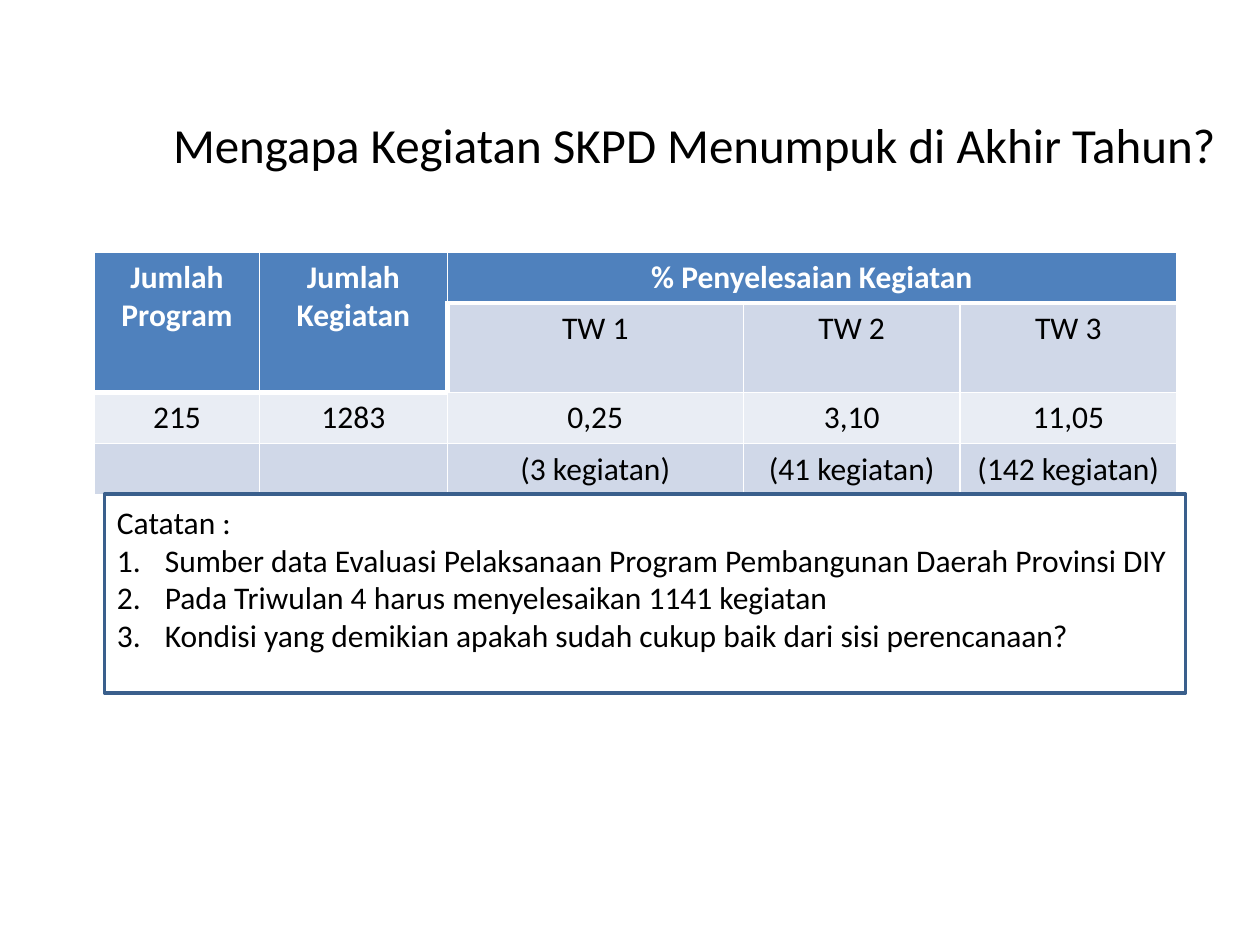
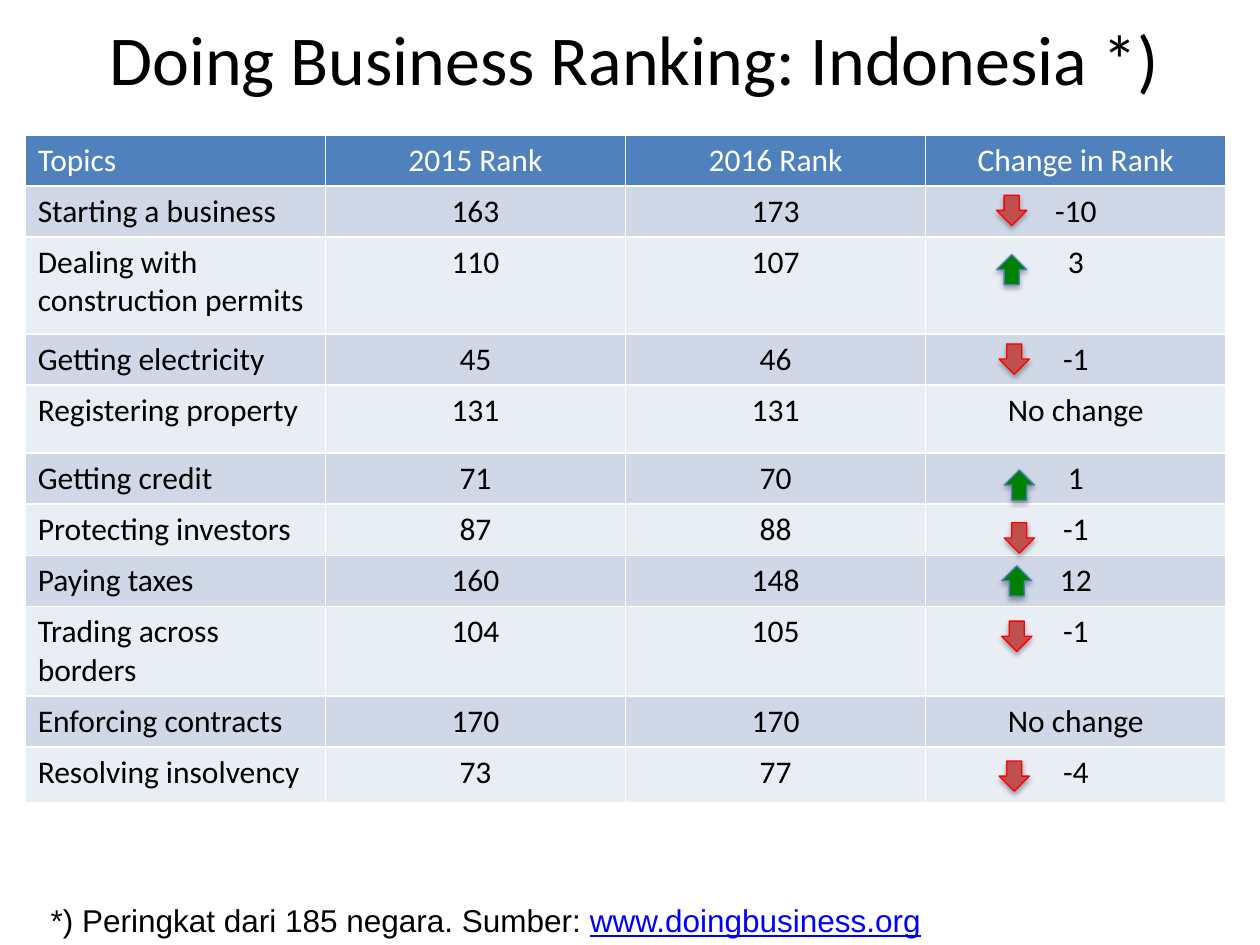
"""Builds two slides on activity completion and business rankings."""
from lxml import etree
from pptx import Presentation
from pptx.dml.color import RGBColor
from pptx.enum.shapes import MSO_SHAPE
from pptx.enum.text import MSO_ANCHOR, PP_ALIGN
from pptx.oxml.ns import qn
from pptx.util import Inches, Pt

CENTER, LEFT = PP_ALIGN.CENTER, PP_ALIGN.LEFT
TOP, MIDDLE = MSO_ANCHOR.TOP, MSO_ANCHOR.MIDDLE
RECT, UP, DOWN = MSO_SHAPE.RECTANGLE, MSO_SHAPE.UP_ARROW, MSO_SHAPE.DOWN_ARROW
TITLE_ONLY = 5

COLORS = {
    "text": "000000", "white": "FFFFFF", "head": "4F81BD", "odd": "D0D8E8",
    "even": "E9EDF4", "note": "3A5F8C", "link": "0000FF",
    "up": "008000", "up_line": "4B7EBC", "down": "C0504D", "down_line": "FF0000",
}
BODY_FONT, NOTE_FONT, BODY_SIZE = "Calibri", "Arial", 18
ARROW = 0.24

PROGRESS_TITLE = "Mengapa Kegiatan SKPD Menumpuk di Akhir Tahun?"
PROGRESS = [
    ("Jumlah Program", "Jumlah Kegiatan", "% Penyelesaian Kegiatan", "", ""),
    ("", "", "TW 1", "TW 2", "TW 3"),
    ("215", "1283", "0,25", "3,10", "11,05"),
    ("", "", "(3 kegiatan)", "(41 kegiatan)", "(142 kegiatan)"),
]
PROGRESS_COLS = [1.31, 1.49, 2.35, 1.72, 1.72]
PROGRESS_ROWS = [0.4, 0.71, 0.4, 0.4]
PROGRESS_SPANS = [((0, 0), (1, 0)), ((0, 1), (1, 1)), ((0, 2), (0, 4))]
NOTES_HEAD = "Catatan :"
NOTES = [
    "Sumber data Evaluasi Pelaksanaan Program Pembangunan Daerah Provinsi DIY",
    "Pada Triwulan 4 harus menyelesaikan 1141 kegiatan",
    "Kondisi yang demikian apakah sudah cukup baik dari sisi perencanaan?",
]

RANKING_TITLE = "Doing Business Ranking: Indonesia *)"
RANKING_HEAD = ("Topics", "2015 Rank", "2016 Rank", "Change in Rank")
RANKING = [
    ("Starting a business", "163", "173", "-10"),
    ("Dealing with construction permits", "110", "107", "3"),
    ("Getting electricity", "45", "46", "-1"),
    ("Registering property", "131", "131", "No change"),
    ("Getting credit", "71", "70", "1"),
    ("Protecting investors", "87", "88", "-1"),
    ("Paying taxes", "160", "148", "12"),
    ("Trading across borders", "104", "105", "-1"),
    ("Enforcing contracts", "170", "170", "No change"),
    ("Resolving insolvency", "73", "77", "-4"),
]
RANKING_ROWS = [0.4, 0.4, 0.77, 0.4, 0.54, 0.4, 0.4, 0.4, 0.71, 0.4, 0.44]
RANKING_LEFT, RANKING_TOP, RANKING_WIDTH = 0.2, 1.07, 9.53
ARROW_OFFSETS = {1: (7.91, 0.08), 2: (7.91, 0.15), 3: (7.93, 0.09), 5: (7.97, 0.15),
                 6: (7.97, 0.17), 7: (7.95, 0.11), 8: (7.95, 0.15), 10: (7.93, 0.15)}
SOURCE = [("*) Peringkat dari 185 negara. Sumber: ", "text", False),
          ("www.doingbusiness.org", "link", True)]


def rgb(name):
    return RGBColor.from_string(COLORS[name])


def box(*lengths):
    return [Inches(v) for v in lengths]


def style(p, color="text", size=BODY_SIZE, font=BODY_FONT, bold=False):
    for r in p.runs:
        r.font.name, r.font.size, r.font.bold = font, Pt(size), bold
        r.font.color.rgb = rgb(color)


def add_slide(prs, title, size, at):
    s = prs.slides.add_slide(prs.slide_layouts[TITLE_ONLY])
    sp = s.shapes.title
    sp.left, sp.top, sp.width, sp.height = box(*at)
    tf = sp.text_frame
    tf.text = title
    tf.vertical_anchor = MIDDLE
    tf.paragraphs[0].alignment = CENTER
    style(tf.paragraphs[0], size=size)
    return s


def set_borders(cell, widths):
    tc_pr = cell._tc.get_or_add_tcPr()
    for i, (side, width) in enumerate(widths.items()):
        ln = etree.Element(qn(f"a:ln{side}"), w=str(Pt(width)))
        fill = etree.SubElement(ln, qn("a:solidFill"))
        etree.SubElement(fill, qn("a:srgbClr"), val=COLORS["white"])
        tc_pr.insert(i, ln)


def add_table(s, rows, left, top, cols, heights, heads, rule, bold, first_align):
    frame = s.shapes.add_table(len(rows), len(cols),
                               *box(left, top, sum(cols), sum(heights)))
    table = frame.table
    for column, width in zip(table.columns, cols):
        column.width = Inches(width)
    for row, height in zip(table.rows, heights):
        row.height = Inches(height)
    for i, row in enumerate(rows):
        for j, text in enumerate(row):
            cell, head = table.cell(i, j), (i, j) in heads
            cell.text = text
            p = cell.text_frame.paragraphs[0]
            p.alignment = CENTER if j else first_align
            style(p, "white" if head else "text", bold=bold and head)
            cell.fill.solid()
            cell.fill.fore_color.rgb = rgb("head" if head else ("even", "odd")[i % 2])
            set_borders(cell, {
                "L": rule if not head and (i, j - 1) in heads else 1,
                "R": 1,
                "T": rule if not head and (i - 1, j) in heads else 1,
                "B": rule if head else 1,
            })
    return table


def add_notes(s):
    sp = s.shapes.add_shape(RECT, *box(0.83, 3.92, 8.58, 1.58))
    sp.shadow.inherit = False
    sp.fill.solid()
    sp.fill.fore_color.rgb = rgb("white")
    sp.line.color.rgb = rgb("note")
    sp.line.width = Pt(2)
    tf = sp.text_frame
    tf.word_wrap = True
    tf.vertical_anchor = TOP
    tf.margin_top = Inches(0.07)
    tf.text = "\n".join([NOTES_HEAD] + NOTES)
    for i, p in enumerate(tf.paragraphs):
        p.alignment = LEFT
        indent = Inches(0.38)
        p_pr = p._p.get_or_add_pPr()
        p_pr.set("marL", str(indent))
        p_pr.set("indent", str(-indent))
        if i:
            etree.SubElement(p_pr, qn("a:buAutoNum"), type="arabicPeriod")
        style(p)


def add_arrow(s, left, top, direction):
    sp = s.shapes.add_shape(UP if direction == "up" else DOWN,
                            *box(left, top, ARROW, ARROW))
    sp.fill.solid()
    sp.fill.fore_color.rgb = rgb(direction)
    sp.line.color.rgb = rgb(f"{direction}_line")
    sp.line.width = Pt(0.75)
    effects = etree.SubElement(sp._element.spPr, qn("a:effectLst"))
    shadow = etree.SubElement(effects, qn("a:outerShdw"), blurRad=str(Pt(3.1)),
                              dist=str(Pt(1.8)), dir="5400000", rotWithShape="0")
    color = etree.SubElement(shadow, qn("a:srgbClr"), val=COLORS["text"])
    etree.SubElement(color, qn("a:alpha"), val="35000")


def add_source(s):
    tf = s.shapes.add_textbox(*box(0.27, 7.1, 7.17, 0.4)).text_frame
    tf.word_wrap = True
    p = tf.paragraphs[0]
    p.alignment = CENTER
    for text, color, underline in SOURCE:
        r = p.add_run()
        r.text = text
        r.font.name, r.font.size, r.font.underline = NOTE_FONT, Pt(BODY_SIZE), underline
        r.font.color.rgb = rgb(color)


def build_progress(prs):
    s = add_slide(prs, PROGRESS_TITLE, 28, (1.22, 0.52, 8.58, 1.25))
    heads = {(i, j) for (top, left), (bottom, right) in PROGRESS_SPANS
             for i in range(top, bottom + 1) for j in range(left, right + 1)}
    table = add_table(s, PROGRESS, 0.75, 2, PROGRESS_COLS, PROGRESS_ROWS,
                      heads, rule=3, bold=True, first_align=CENTER)
    for first, last in PROGRESS_SPANS:
        table.cell(*first).merge(table.cell(*last))
    add_notes(s)


def build_ranking(prs):
    s = add_slide(prs, RANKING_TITLE, 40, (0.27, 0.03, 9.53, 0.85))
    count = len(RANKING_HEAD)
    add_table(s, [RANKING_HEAD] + RANKING, RANKING_LEFT, RANKING_TOP,
              [RANKING_WIDTH / count] * count, RANKING_ROWS,
              {(0, j) for j in range(count)}, rule=1, bold=False, first_align=LEFT)
    for row, (left, drop) in ARROW_OFFSETS.items():
        change = int(RANKING[row - 1][-1])
        top = RANKING_TOP + sum(RANKING_ROWS[:row]) + drop
        add_arrow(s, left, top, "up" if change > 0 else "down")
    add_source(s)


def main():
    prs = Presentation()
    prs.slide_width, prs.slide_height = box(10, 7.5)
    build_progress(prs)
    build_ranking(prs)
    prs.save("out.pptx")


if __name__ == "__main__":
    main()
